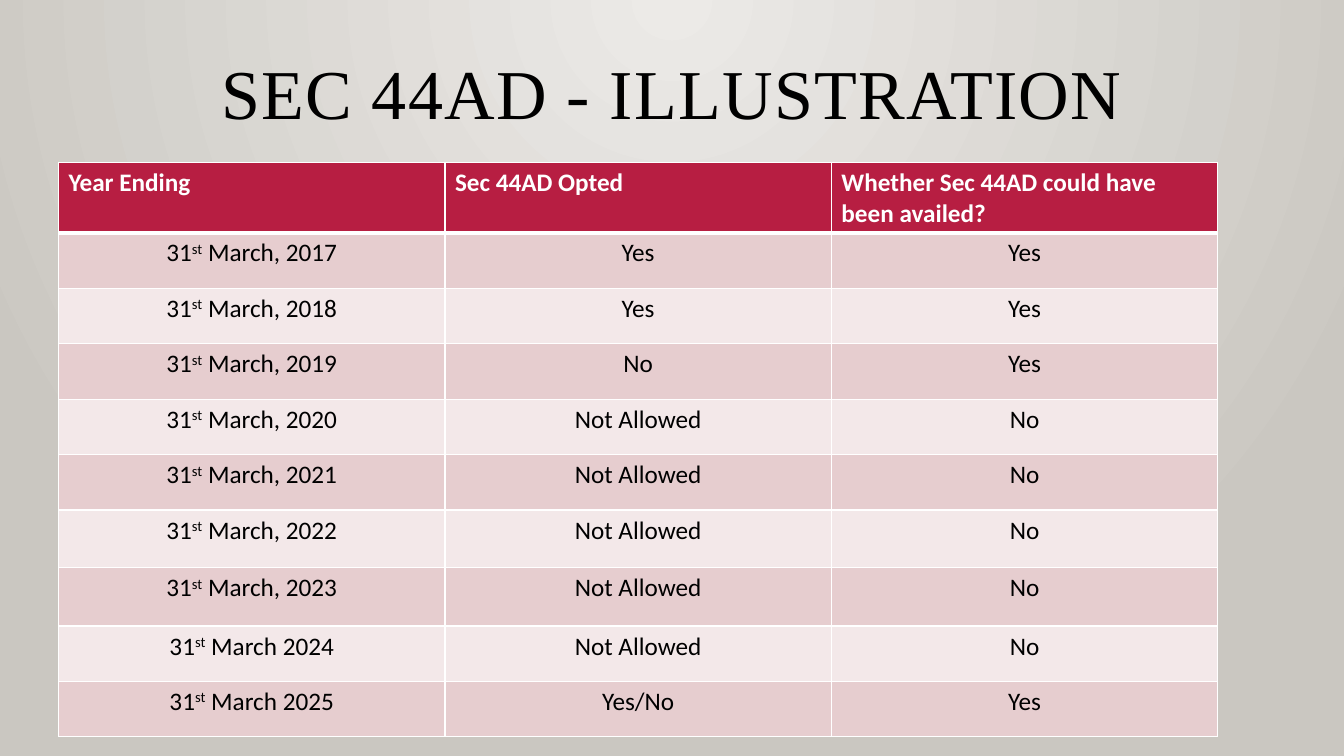
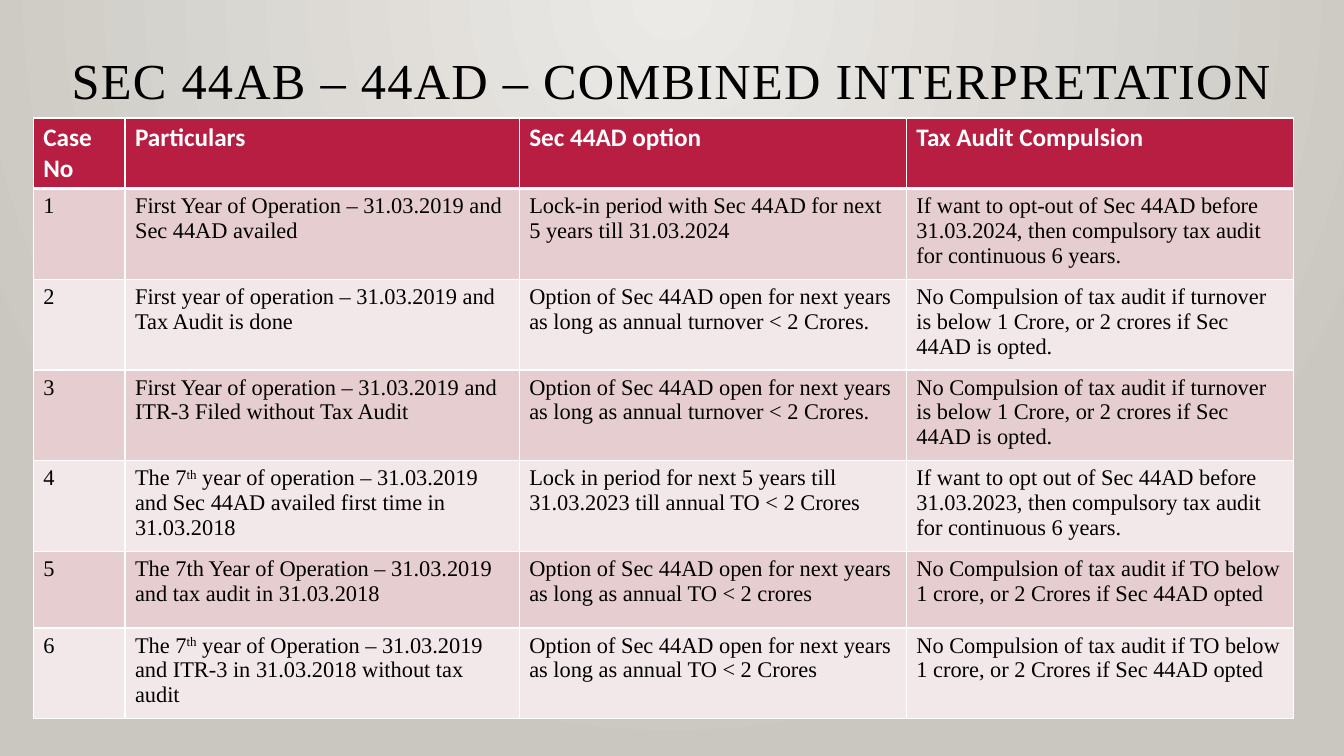
from pptx import Presentation
from pptx.dml.color import RGBColor
from pptx.enum.text import MSO_ANCHOR, MSO_AUTO_SIZE, PP_ALIGN
from pptx.oxml import parse_xml
from pptx.oxml.ns import nsdecls, qn
from pptx.util import Inches, Pt

WIDTH, HEIGHT = 13.33, 7.5
TITLE_TOP = 0.48
HEADER_HEIGHT = 0.7
HEADER_RULE, GRID_RULE = 3, 1
SERIF, SANS = "Times New Roman", "Calibri"
COLORS = {
    "glow": "ECEAE7",
    "edge": "CAC7C1",
    "header": "B71E42",
    "odd": "E6CDCF",
    "even": "F3E8E9",
    "rule": "FFFFFF",
    "light": "FFFFFF",
    "dark": "000000",
}

# Text between ^ marks is raised
YEARS = [
    ("Year Ending", "Sec 44AD Opted", "Whether Sec 44AD could have been availed?"),
    ("31^st^ March, 2017", "Yes", "Yes"),
    ("31^st^ March, 2018", "Yes", "Yes"),
    ("31^st^ March, 2019", "No", "Yes"),
    ("31^st^ March, 2020", "Not Allowed", "No"),
    ("31^st^ March, 2021", "Not Allowed", "No"),
    ("31^st^ March, 2022", "Not Allowed", "No"),
    ("31^st^ March, 2023", "Not Allowed", "No"),
    ("31^st^ March 2024", "Not Allowed", "No"),
    ("31^st^ March 2025", "Yes/No", "Yes"),
]

OPEN_TURNOVER = "Option of Sec 44AD open for next years as long as annual turnover < 2 Crores."
NO_AUDIT_TURNOVER = ("No Compulsion of tax audit if turnover is below 1 Crore, "
                     "or 2 crores if Sec 44AD is opted.")
NO_AUDIT_TO = "No Compulsion of tax audit if TO below 1 crore, or 2 Crores if Sec 44AD opted"
CASES = [
    ("Case No", "Particulars", "Sec 44AD option", "Tax Audit Compulsion"),
    ("1", "First Year of Operation – 31.03.2019 and Sec 44AD availed",
     "Lock-in period with Sec 44AD for next 5 years till 31.03.2024",
     "If want to opt-out of Sec 44AD before 31.03.2024, "
     "then compulsory tax audit for continuous 6 years."),
    ("2", "First year of operation – 31.03.2019 and Tax Audit is done",
     OPEN_TURNOVER, NO_AUDIT_TURNOVER),
    ("3", "First Year of operation – 31.03.2019 and ITR-3 Filed without Tax Audit",
     OPEN_TURNOVER, NO_AUDIT_TURNOVER),
    ("4", "The 7^th^ year of operation – 31.03.2019 and Sec 44AD availed "
     "first time in 31.03.2018",
     "Lock in period for next 5 years till 31.03.2023 till annual TO < 2 Crores",
     "If want to opt out of Sec 44AD before 31.03.2023, "
     "then compulsory tax audit for continuous 6 years."),
    ("5", "The 7th Year of Operation – 31.03.2019 and tax audit in 31.03.2018",
     "Option of Sec 44AD open for next years as long as annual TO < 2 crores",
     NO_AUDIT_TO),
    ("6", "The 7^th^ year of Operation – 31.03.2019 and ITR-3 in 31.03.2018 "
     "without tax audit",
     "Option of Sec 44AD open for next years as long as annual TO < 2 Crores",
     NO_AUDIT_TO),
]


def write_text(frame, text, size, font, color, bold=False, align=PP_ALIGN.LEFT, spacing=0):
    """Fill the first paragraph, raising the parts between ^ marks."""
    para = frame.paragraphs[0]
    para.alignment = align
    for index, part in enumerate(text.split("^")):
        span = para.add_run()
        span.text = part
        span.font.size = Pt(size)
        span.font.name = font
        span.font.bold = bold
        span.font.color.rgb = RGBColor.from_string(COLORS[color])
        properties = span._r.get_or_add_rPr()
        if spacing:
            properties.set("spc", str(round(spacing * 100)))
        if index % 2:
            properties.set("baseline", "30000")


def set_background(master):
    """Give every slide the same round glow from the top centre."""
    common = master.element.find(qn("p:cSld"))
    for old in common.findall(qn("p:bg")):
        common.remove(old)
    stops = "".join(
        f'<a:gs pos="{position}"><a:srgbClr val="{COLORS[name]}"/></a:gs>'
        for position, name in ((0, "glow"), (100000, "edge")))
    common.insert(0, parse_xml(
        f'<p:bg {nsdecls("p", "a")}><p:bgPr><a:gradFill rotWithShape="1">'
        f'<a:gsLst>{stops}</a:gsLst><a:path path="circle">'
        '<a:fillToRect l="43000" t="0" r="43000" b="100000"/></a:path>'
        '</a:gradFill><a:effectLst/></p:bgPr></p:bg>'))


def add_page(deck, title, size, width, height):
    """Add a slide with a centred title."""
    page = deck.slides.add_slide(deck.slide_layouts[5])
    box = page.shapes.title
    box.left, box.top = Inches((WIDTH - width) / 2), Inches(TITLE_TOP)
    box.width, box.height = Inches(width), Inches(height)
    frame = box.text_frame
    frame.margin_left = frame.margin_right = frame.margin_bottom = 0
    frame.margin_top = Inches(0.01)
    frame.vertical_anchor = MSO_ANCHOR.TOP
    frame.word_wrap = True
    frame.auto_size = MSO_AUTO_SIZE.SHAPE_TO_FIT_TEXT
    write_text(frame, title, size, SERIF, "dark", align=PP_ALIGN.CENTER, spacing=0.9)
    return page


def style_cell(cell, fill, top, bottom):
    """Draw the borders, then the fill, as the schema orders them."""
    properties = cell._tc.get_or_add_tcPr()
    for side, points in (("L", GRID_RULE), ("R", GRID_RULE), ("T", top), ("B", bottom)):
        properties.append(parse_xml(
            f'<a:ln{side} {nsdecls("a")} w="{Pt(points)}"><a:solidFill>'
            f'<a:srgbClr val="{COLORS["rule"]}"/></a:solidFill></a:ln{side}>'))
    cell.fill.solid()
    cell.fill.fore_color.rgb = RGBColor.from_string(COLORS[fill])


def add_grid(page, rows, left, top, columns, heights, **body):
    """Add a banded table; body is the text format below the header."""
    grid = page.shapes.add_table(
        len(rows), len(columns), Inches(left), Inches(top),
        Inches(sum(columns)), Inches(sum(heights))).table
    for column, width in zip(grid.columns, columns):
        column.width = Inches(width)
    for number, (row, height, texts) in enumerate(zip(grid.rows, heights, rows)):
        row.height = Inches(height)
        fill = "header" if number == 0 else "odd" if number % 2 else "even"
        header = dict(size=18, font=SANS, color="light", bold=True)
        for cell, text in zip(row.cells, texts):
            style_cell(cell, fill,
                       top=HEADER_RULE if number == 1 else GRID_RULE,
                       bottom=HEADER_RULE if number == 0 else GRID_RULE)
            write_text(cell.text_frame, text, **(body if number else header))


def main():
    deck = Presentation()
    deck.slide_width, deck.slide_height = Inches(WIDTH), Inches(HEIGHT)
    set_background(deck.slide_master)

    # Year by year illustration
    page = add_page(deck, "SEC 44AD - ILLUSTRATION", 50, width=11.33, height=0.85)
    add_grid(page, YEARS, left=0.58, top=1.61, columns=[11.5 / 3] * 3,
             heights=[HEADER_HEIGHT] + [0.55] * 5 + [0.57, 0.58] + [0.55] * 2,
             size=18, font=SANS, color="dark", align=PP_ALIGN.CENTER)

    # Cases under both sections
    page = add_page(deck, "SEC 44AB – 44AD – COMBINED INTERPRETATION", 36,
                    width=12.83, height=0.62)
    add_grid(page, CASES, left=0.33, top=1.17, columns=[0.91, 3.91, 3.84, 3.84],
             heights=[HEADER_HEIGHT] + [0.9] * 4 + [0.76, 0.9],
             size=16, font=SERIF, color="dark")

    deck.save("out.pptx")


if __name__ == "__main__":
    main()
